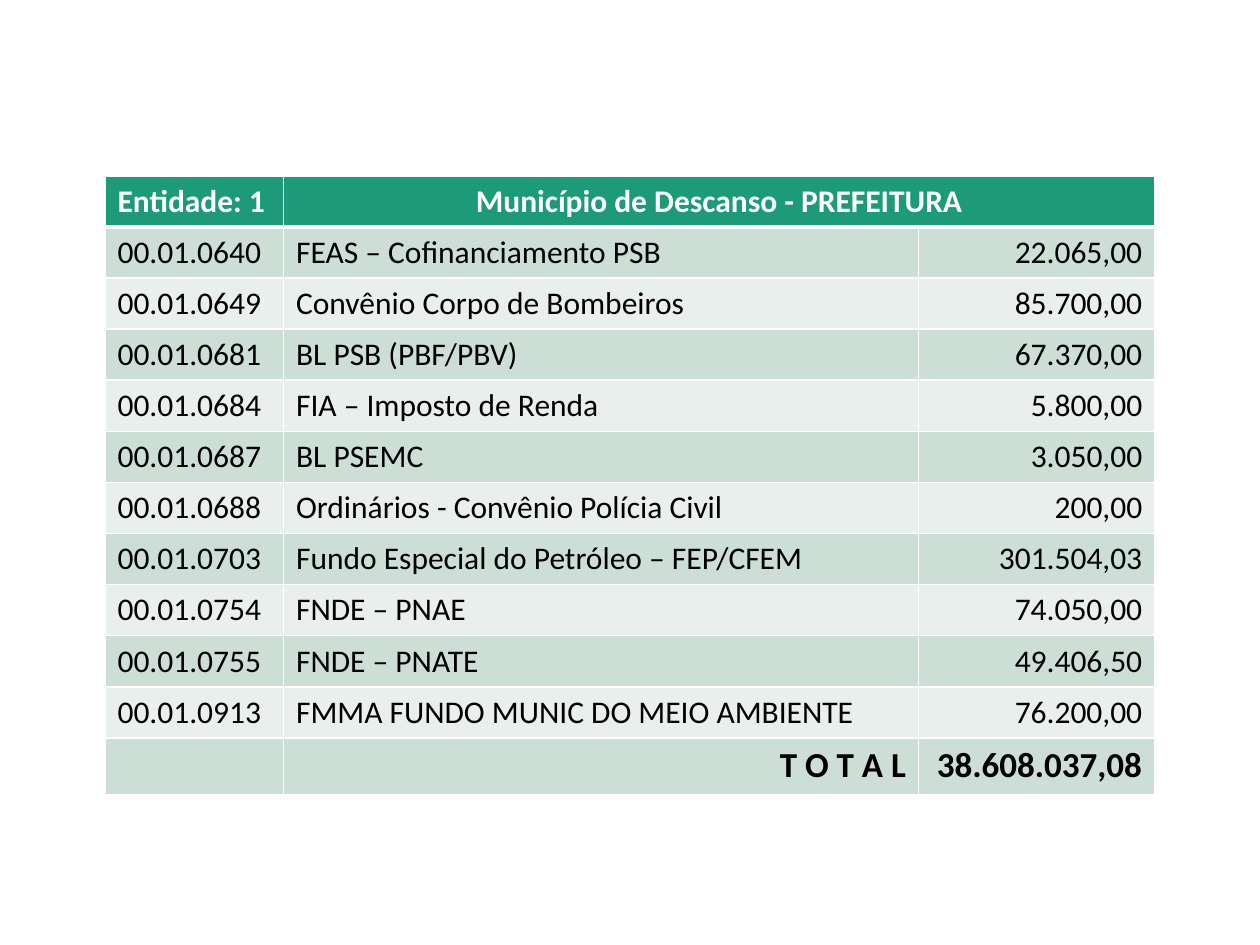
from lxml.etree import SubElement
from pptx import Presentation
from pptx.dml.color import RGBColor
from pptx.enum.text import PP_ALIGN
from pptx.oxml.ns import qn
from pptx.util import Pt


def rgb(value):
    return RGBColor.from_string(value)


def add_border(cell, side, width):
    ln = SubElement(cell._tc.get_or_add_tcPr(), qn(f"a:{side}"), w=str(Pt(width)))
    fill = SubElement(ln, qn("a:solidFill"))
    SubElement(fill, qn("a:srgbClr"), val="FFFFFF")


rows = [
    ("Entidade: 1", "Município de Descanso - PREFEITURA", ""),
    ("00.01.0640", "FEAS – Cofinanciamento PSB", "22.065,00"),
    ("00.01.0649", "Convênio Corpo de Bombeiros", "85.700,00"),
    ("00.01.0681", "BL PSB (PBF/PBV)", "67.370,00"),
    ("00.01.0684", "FIA – Imposto de Renda", "5.800,00"),
    ("00.01.0687", "BL PSEMC", "3.050,00"),
    ("00.01.0688", "Ordinários - Convênio Polícia Civil", "200,00"),
    ("00.01.0703", "Fundo Especial do Petróleo – FEP/CFEM", "301.504,03"),
    ("00.01.0754", "FNDE – PNAE", "74.050,00"),
    ("00.01.0755", "FNDE – PNATE", "49.406,50"),
    ("00.01.0913", "FMMA FUNDO MUNIC DO MEIO AMBIENTE", "76.200,00"),
    ("", "T O T A L", "38.608.037,08"),
]
widths = [102, 363, 135]
last = len(rows) - 1
header_font = {"name": "Calibri", "size": Pt(18), "bold": True}
body_font = {"name": "Calibri", "size": Pt(18), "bold": False}
total_font = {"name": "Calibri", "size": Pt(20), "bold": True}

prs = Presentation()
prs.slide_width, prs.slide_height = Pt(720), Pt(540)
s = prs.slides.add_slide(prs.slide_layouts[6])

table = s.shapes.add_table(len(rows), 3, Pt(60), Pt(100.5), Pt(600), Pt(353.8)).table
for col, width in zip(table.columns, widths):
    col.width = Pt(width)
table.cell(0, 1).merge(table.cell(0, 2))

for i, values in enumerate(rows):
    table.rows[i].height = Pt(32.6 if i == last else 29.2)
    font = header_font if i == 0 else total_font if i == last else body_font
    fill = "1D9A78" if i == 0 else "CDDED6" if i % 2 else "E8EFEC"
    for j, text in enumerate(values):
        cell = table.cell(i, j)
        add_border(cell, "lnL", 1)
        add_border(cell, "lnR", 1)
        add_border(cell, "lnT", 3 if i == 1 else 1)
        add_border(cell, "lnB", 3 if i == 0 else 1)
        cell.fill.solid()
        cell.fill.fore_color.rgb = rgb(fill)
        p = cell.text_frame.paragraphs[0]
        if i == 0 and j == 1:
            p.alignment = PP_ALIGN.CENTER
        elif j == 2 or (i == last and j == 1):
            p.alignment = PP_ALIGN.RIGHT
        if text:
            r = p.add_run()
            r.text = text
            for key, value in font.items():
                setattr(r.font, key, value)
            r.font.color.rgb = rgb("FFFFFF" if i == 0 else "000000")

prs.save("out.pptx")
